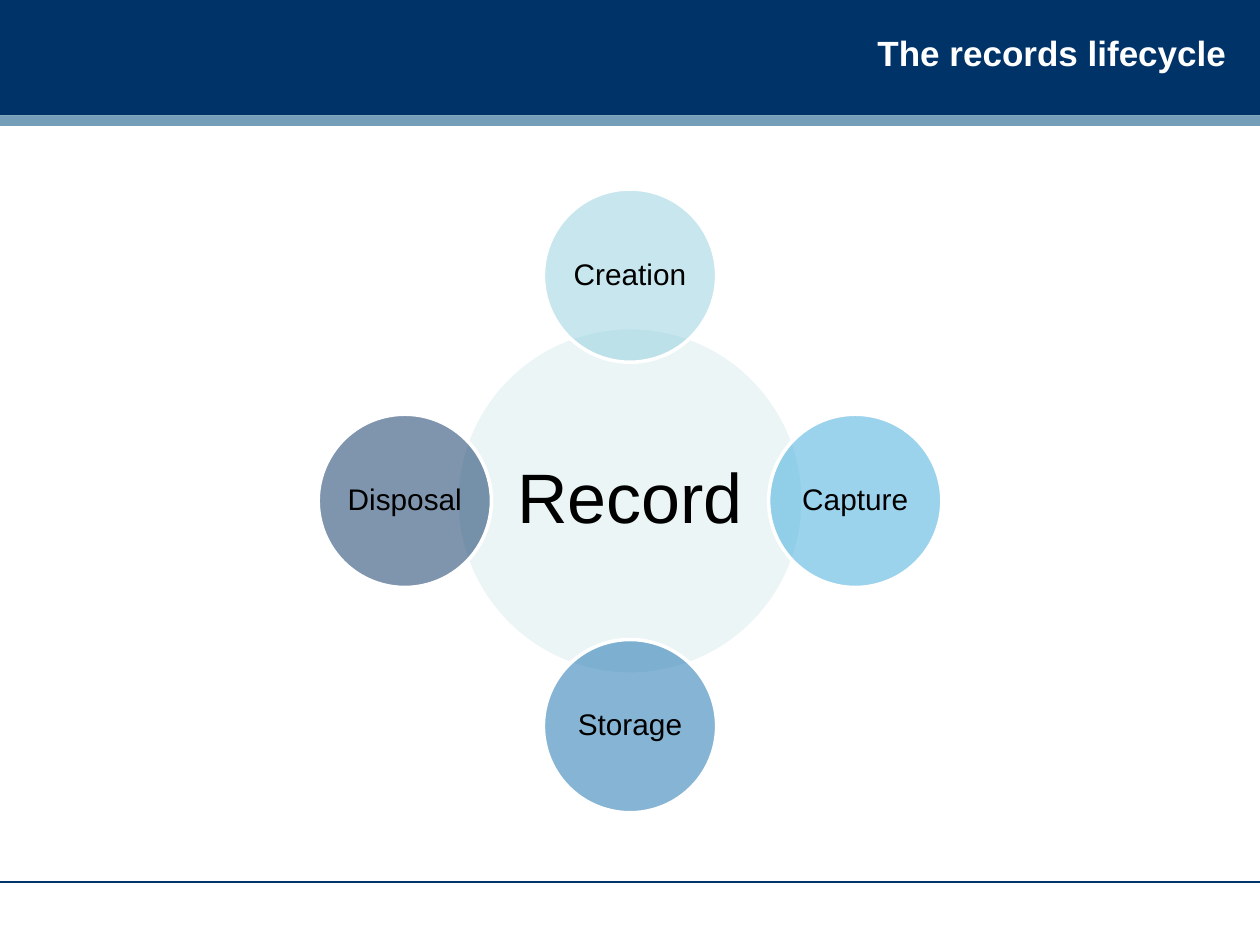
from dataclasses import dataclass
from math import cos, radians, sin

from lxml.etree import SubElement
from pptx import Presentation
from pptx.dml.color import RGBColor
from pptx.enum.shapes import MSO_CONNECTOR, MSO_SHAPE
from pptx.enum.text import MSO_ANCHOR, PP_ALIGN
from pptx.oxml.ns import qn
from pptx.util import Pt


@dataclass(frozen=True)
class Theme:
    font: str = "Arial"
    navy: str = "003368"
    stripe: str = "759FB8"
    white: str = "FFFFFF"
    black: str = "000000"
    hub: str = "DAEDEF"
    stages: tuple = ("90CFDE", "38A9DC", "0E6AAB", "002D5E")
    title_size: int = 20
    hub_size: int = 40
    stage_size: int = 17


theme = Theme()
prs = Presentation()
prs.slide_width, prs.slide_height = Pt(720), Pt(540)
slide = prs.slides.add_slide(prs.slide_layouts[5])
shapes = slide.shapes


def add_band(top, height, color):
    band = shapes.add_shape(MSO_SHAPE.RECTANGLE, 0, Pt(top), Pt(720), Pt(height))
    band.shadow.inherit = False
    band.fill.solid()
    band.fill.fore_color.rgb = RGBColor.from_string(color)
    band.line.fill.background()
    return band


def add_circle(label, center_x, center_y, diameter, color, size):
    circle = shapes.add_shape(
        MSO_SHAPE.OVAL, Pt(center_x - diameter / 2), Pt(center_y - diameter / 2),
        Pt(diameter), Pt(diameter))
    circle.shadow.inherit = False
    circle.fill.solid()
    circle.fill.fore_color.rgb = RGBColor.from_string(color)
    # Half-transparent fill
    rgb = circle.fill._xPr.find(qn("a:solidFill"))[0]
    SubElement(rgb, qn("a:alpha")).set("val", "50000")
    circle.line.color.rgb = RGBColor.from_string(theme.white)
    circle.line.width = Pt(2)
    frame = circle.text_frame
    frame.word_wrap = False
    frame.vertical_anchor = MSO_ANCHOR.MIDDLE
    frame.margin_left = frame.margin_right = frame.margin_top = frame.margin_bottom = Pt(1.5)
    frame.text = label
    paragraph = frame.paragraphs[0]
    paragraph.alignment = PP_ALIGN.CENTER
    paragraph.line_spacing = 0.9
    paragraph.font.name = theme.font
    paragraph.font.size = Pt(size)
    paragraph.font.color.rgb = RGBColor.from_string(theme.black)


# Header bands and footer rule
header = add_band(0, 66, theme.navy)
add_band(66, 6, theme.stripe)
footer_rule = shapes.add_connector(MSO_CONNECTOR.STRAIGHT, 0, Pt(504), Pt(720), Pt(504))
footer_rule.line.color.rgb = RGBColor.from_string(theme.navy)
footer_rule.line.width = Pt(0.75)
SubElement(footer_rule._element.spPr, qn("a:effectLst"))

# Title, lifted in front of the header
title = shapes.title
header._element.addnext(title._element)
title.left, title.top, title.width, title.height = Pt(234), Pt(0), Pt(474), Pt(60)
title.text_frame.text = "The records lifecycle"
title.text_frame.vertical_anchor = MSO_ANCHOR.MIDDLE
heading = title.text_frame.paragraphs[0]
heading.alignment = PP_ALIGN.RIGHT
heading.font.name = theme.font
heading.font.size = Pt(theme.title_size)
heading.font.bold = True
heading.font.color.rgb = RGBColor.from_string(theme.white)

# Record hub, with the stages clockwise from the top
hub_x, hub_y, orbit = 360, 286.2, 128.7
add_circle("Record", hub_x, hub_y, 198, theme.hub, theme.hub_size)
stages = ("Creation", "Capture", "Storage", "Disposal")
for index, (stage, color) in enumerate(zip(stages, theme.stages)):
    angle = radians(index * 360 / len(stages) - 90)
    add_circle(stage, hub_x + orbit * cos(angle), hub_y + orbit * sin(angle),
               99, color, theme.stage_size)

prs.save("out.pptx")
